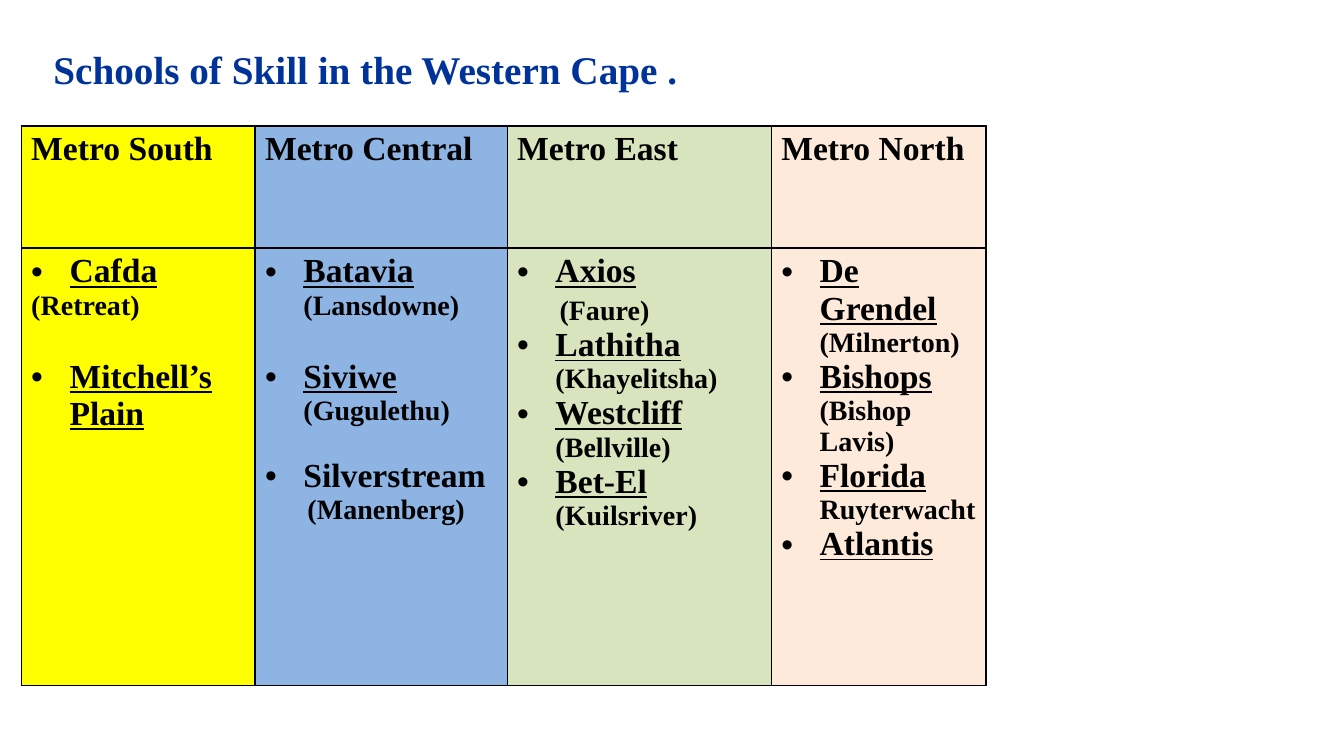
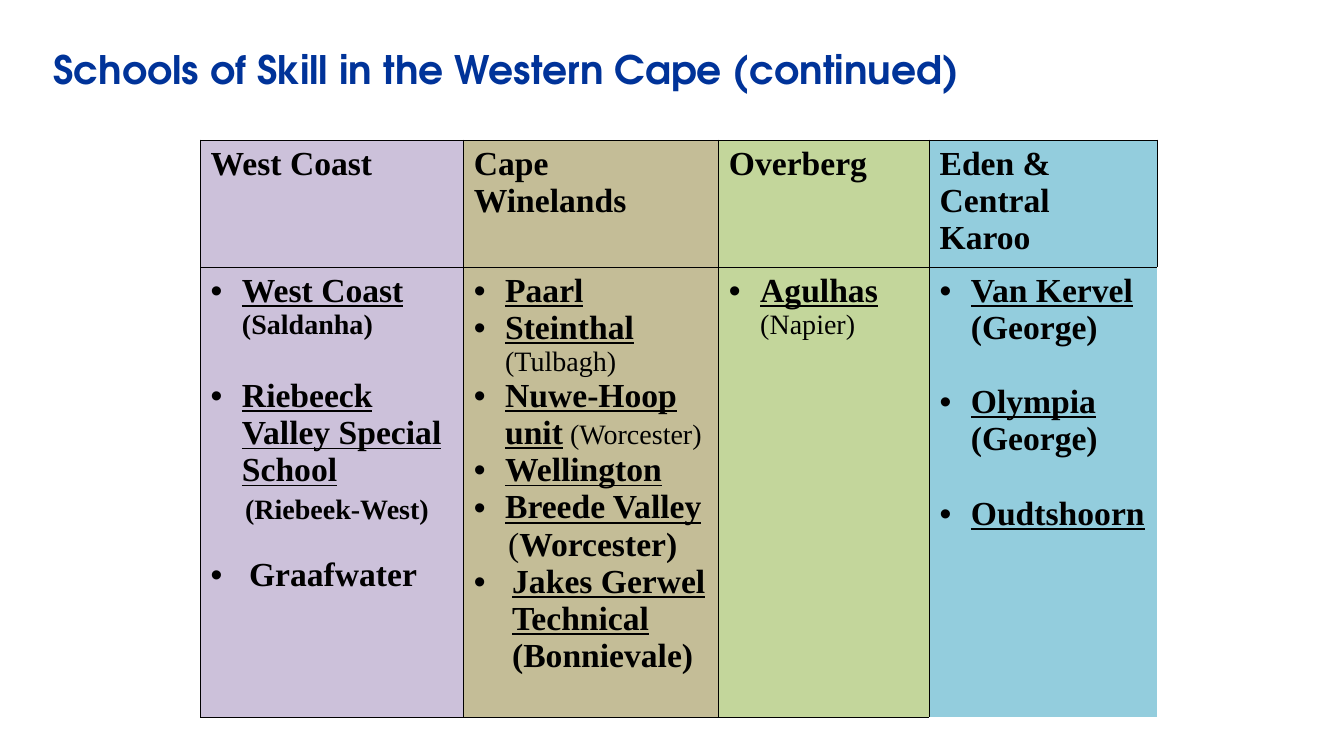
from dataclasses import dataclass

from lxml.etree import SubElement
from pptx import Presentation
from pptx.dml.color import RGBColor
from pptx.enum.text import MSO_ANCHOR, MSO_AUTO_SIZE, PP_ALIGN
from pptx.oxml import parse_xml
from pptx.oxml.ns import nsdecls, qn
from pptx.util import Inches, Pt


@dataclass(frozen=True)
class Theme:
    title_color: str = "003399"
    text_color: str = "000000"
    border: str = "000000"
    no_border: str = "FFFFFF"
    font: str = "Times New Roman"
    title_size: float = 28
    name_size: float = 24
    place_size: float = 20
    border_width: float = 1
    wide_gap: float = 26.6   # one line of name text
    small_gap: float = 22.1  # one line of place text
    hair_gap: float = 4


T = Theme()


@dataclass(frozen=True)
class Run:
    text: str
    size: float = T.name_size
    bold: bool = True
    underline: bool = False


@dataclass(frozen=True)
class Para:
    runs: tuple[Run, ...]
    indent: float = 0
    bullet: bool = False
    gap: float = 0


@dataclass(frozen=True)
class District:
    name: str
    fill: str
    width: float
    paras: tuple[Para, ...]
    open_edges: str = ""  # sides of the body cell with a white border


@dataclass(frozen=True)
class SchoolSlide:
    title: str
    title_font: str
    left: float
    top: float
    rows: tuple[float, float]
    districts: tuple[District, ...]


def school(name: str, place: str = "", *, indent: float = 0.38, gap: float = 0,
           size: float = T.place_size, bold: bool = True,
           underline: bool = True) -> Para:
    """A bulleted school, with its town after the name."""
    runs = [Run(name, underline=underline)]
    if place:
        runs.append(Run(f" {place}", size, bold))
    return Para(tuple(runs), indent, True, gap)


def town(text: str, indent: float = 0, gap: float = 0) -> Para:
    """A town on a line of its own."""
    return Para((Run(text, T.place_size),), indent, gap=gap)


# Content
NARROW = 0.31
SLIDES = (
    SchoolSlide(
        "Schools of Skill in the Western Cape .", T.font, 0.21, 1.25, (1.21, 4.34),
        (
            District("Metro South", "FFFF00", 2.32, (
                school("Cafda"),
                town("(Retreat)"),
                school("Mitchell’s Plain", gap=T.wide_gap),
            )),
            District("Metro Central", "8EB4E3", 2.5, (
                school("Batavia", "(Lansdowne)"),
                school("Siviwe", "(Gugulethu)", gap=T.wide_gap),
                school("Silverstream", gap=T.small_gap, underline=False),
                town("(Manenberg)", 0.42),
            )),
            District("Metro East", "D7E4BD", 2.62, (
                school("Axios"),
                town("(Faure)", 0.42, T.hair_gap),
                school("Lathitha", "(Khayelitsha)"),
                school("Westcliff", "(Bellville)"),
                school("Bet-El", "(Kuilsriver)"),
            )),
            District("Metro North", "FDEADA", 2.13, (
                school("De Grendel", "(Milnerton)"),
                school("Bishops", "(Bishop Lavis)"),
                school("Florida", "Ruyterwacht"),
                school("Atlantis"),
            )),
        )),
    SchoolSlide(
        "Schools of Skill in the Western Cape (continued)", "TeX Gyre Adventor",
        1.99, 1.39, (1.26, 4.47),
        (
            District("West Coast", "CCC1DA", 2.61, (
                school("West Coast", "(Saldanha)", indent=NARROW),
                school("Riebeeck Valley Special School", indent=NARROW,
                       gap=T.wide_gap),
                town("(Riebeek-West)", 0.34, T.hair_gap),
                school("Graafwater", gap=T.small_gap, underline=False),
            )),
            District("Cape Winelands", "C4BD97", 2.53, (
                school("Paarl", indent=NARROW),
                school("Steinthal", "(Tulbagh)", indent=NARROW, bold=False),
                school("Nuwe-Hoop unit", "(Worcester)", indent=NARROW, bold=False),
                school("Wellington", indent=NARROW),
                school("Breede Valley", indent=NARROW),
                Para((Run("(", bold=False), Run("Worcester)")), 0.34),
                school("Jakes Gerwel Technical", "(Bonnievale)", size=T.name_size),
            )),
            District("Overberg", "C3D69B", 2.09, (
                school("Agulhas", "(Napier)", indent=NARROW, bold=False),
            )),
            District("Eden & Central Karoo", "93CDDD", 2.26, (
                school("Van Kervel", "(George)", indent=NARROW, size=T.name_size),
                school("Olympia", "(George)", indent=NARROW, size=T.name_size,
                       gap=T.wide_gap),
                school("Oudtshoorn", indent=NARROW, gap=T.wide_gap),
            ), open_edges="RB"),
        )),
)


# Drawing
def add_text(p, text: str, *, size: float = T.name_size, font: str = T.font,
             color: str = T.text_color, bold: bool = True,
             underline: bool = False) -> None:
    r = p.add_run()
    r.text = text
    f = r.font
    f.size, f.name, f.bold, f.underline = Pt(size), font, bold, underline
    f.color.rgb = RGBColor.from_string(color)


def format_paragraph(p, para: Para) -> None:
    pPr = p._p.get_or_add_pPr()
    pPr.set("marL", str(Inches(para.indent)))
    pPr.set("indent", str(Inches(-para.indent if para.bullet else 0)))
    if para.bullet:
        SubElement(pPr, qn("a:buFont")).set("typeface", "Arial")
        SubElement(pPr, qn("a:buChar")).set("char", "•")
    if para.gap:
        p.space_before = Pt(para.gap)


def fill_cell(cell, fill: str, paras: tuple[Para, ...], open_edges: str = "") -> None:
    cell.fill.solid()
    cell.fill.fore_color.rgb = RGBColor.from_string(fill)
    tcPr = cell._tc.get_or_add_tcPr()
    for i, side in enumerate("LRTB"):
        color = T.no_border if side in open_edges else T.border
        tcPr.insert(i, parse_xml(
            f'<a:ln{side} {nsdecls("a")} w="{Pt(T.border_width)}"><a:solidFill>'
            f'<a:srgbClr val="{color}"/></a:solidFill></a:ln{side}>'))
    tf = cell.text_frame
    for i, para in enumerate(paras):
        p = tf.add_paragraph() if i else tf.paragraphs[0]
        format_paragraph(p, para)
        for run in para.runs:
            add_text(p, run.text, size=run.size, bold=run.bold,
                     underline=run.underline)


def add_title(s, text: str, font: str) -> None:
    sp = s.shapes.title
    sp.left, sp.top = Inches(0.43), Inches(0.2)
    sp.width, sp.height = Inches(12.4), Inches(0.96)
    tf = sp.text_frame
    tf.auto_size = MSO_AUTO_SIZE.NONE
    tf.vertical_anchor = MSO_ANCHOR.MIDDLE
    p = tf.paragraphs[0]
    p.alignment = PP_ALIGN.LEFT
    add_text(p, text, size=T.title_size, font=font, color=T.title_color)


def add_districts(s, slide: SchoolSlide) -> None:
    width = sum(d.width for d in slide.districts)
    table = s.shapes.add_table(
        2, len(slide.districts), Inches(slide.left), Inches(slide.top),
        Inches(width), Inches(sum(slide.rows))).table
    table.first_row = table.horz_banding = False
    for row, height in zip(table.rows, slide.rows):
        row.height = Inches(height)
    for col, d in enumerate(slide.districts):
        table.columns[col].width = Inches(d.width)
        fill_cell(table.cell(0, col), d.fill, (Para((Run(d.name),)),))
        fill_cell(table.cell(1, col), d.fill, d.paras, d.open_edges)


def main() -> None:
    prs = Presentation()
    prs.slide_width, prs.slide_height = Inches(13.33), Inches(7.5)
    for slide in SLIDES:
        s = prs.slides.add_slide(prs.slide_layouts[5])
        add_title(s, slide.title, slide.title_font)
        add_districts(s, slide)
    prs.save("out.pptx")


if __name__ == "__main__":
    main()
